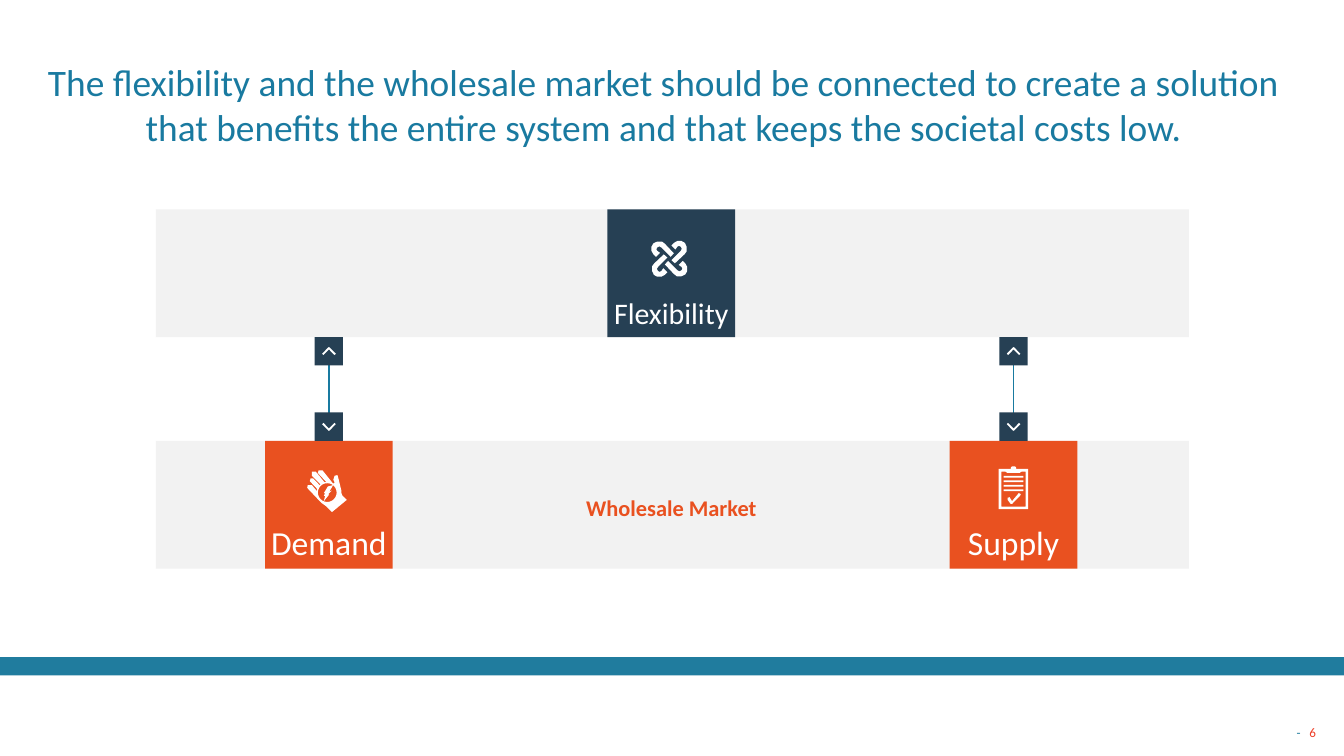
"""Build the slide that links the flexibility and wholesale markets."""
from lxml import etree
from pptx import Presentation
from pptx.dml.color import RGBColor
from pptx.enum import shapes, text
from pptx.oxml import ns
from pptx.util import Pt

TEAL = RGBColor(0x19, 0x7A, 0xA0)
FOOTER_TEAL = RGBColor(0x20, 0x7C, 0x9E)
NAVY = RGBColor(0x26, 0x40, 0x54)
ORANGE = RGBColor(0xE9, 0x51, 0x20)
RED = RGBColor(0xEE, 0x3E, 0x27)
GREY = RGBColor(0xF2, 0xF2, 0xF2)
WHITE = RGBColor(0xFF, 0xFF, 0xFF)

FONT = "Calibri"
CARD = 68.4
BADGE = 15.2
FLEX_TOP, MARKET_TOP = 112.2, 236.2
BAND_LEFT, BAND_WIDTH = 83.5, 553.5

LOOP = [(-7.2, -1.1), (-5, -3.2), (-6.5, -4.3), (-7, -5.2), (-6.5, -6.1),
        (-5.4, -6.7), (-4.3, -6.1), (0.7, -1.1), (2.4, -3), (-2.4, -8.1),
        (-4, -9.3), (-6.5, -9.3), (-8.6, -8.3), (-9.6, -6.5), (-9.6, -4.3),
        (-8.6, -2.5)]
HAND = [(16.6, 2.5), (15.1, 2.9), (14.4, 5), (15.1, 6.5), (14.4, 7.2),
        (8.6, 0), (6.5, 0), (6.1, 1.4), (11.5, 7.2), (12.2, 8.3),
        (11.5, 8.6), (5, 0.7), (2.9, 0.7), (2.9, 2.9), (9.4, 9.4),
        (9.4, 10.4), (3.6, 4.3), (2.2, 4.3), (1.8, 5.8), (7.2, 11.5),
        (7.2, 12.2), (6.5, 12.2), (2.9, 7.9), (0.7, 7.9), (0.4, 9.4),
        (7.9, 17.3), (10.8, 19.4), (12.2, 20.9), (13.7, 22.3),
        (21.6, 15.8), (19.4, 13.7), (18.7, 12.2), (18.7, 10.8), (17.3, 5)]
BOLT = [(2.9, 3.6), (5, 0), (2.2, 0.7), (0, 4.3), (0.7, 4.3), (0, 5.8),
        (0.7, 5.8), (0, 8.6), (2.9, 5), (2.2, 5), (4.3, 2.9)]
BOARD = [(0, 1.4), (6.5, 1.4), (6.5, 0.7), (7.2, 0), (8.6, 0), (9.4, 0.7),
         (9.4, 1.4), (15.8, 1.4), (15.8, 23), (0, 23)]
PAPER = [(1.4, 2.9), (3.6, 2.9), (4.7, 3.6), (11.2, 3.6), (12.2, 2.9),
         (14.4, 2.9), (14.4, 21.6), (1.4, 21.6)]
TICK = [(6.5, 0.7), (2.9, 5), (1.6, 2.9), (0.5, 3.2), (0.5, 4.3),
        (2.2, 6.5), (2.9, 6.5), (7.2, 2.2), (7.6, 1.2)]


def style_run(run, size, color, bold=False):
    """Set the typeface, size and colour of one run."""
    run.font.name = FONT
    run.font.size = Pt(size)
    run.font.bold = bold
    run.font.color.rgb = color


def set_insets(frame, horizontal, vertical):
    """Set equal insets left and right, and top and bottom."""
    frame.margin_left = frame.margin_right = Pt(horizontal)
    frame.margin_top = frame.margin_bottom = Pt(vertical)


def add_block(slide, left, top, width, height, color, preset=shapes.MSO_SHAPE.RECTANGLE):
    """Add a filled preset shape without line or shadow."""
    block = slide.shapes.add_shape(preset, Pt(left), Pt(top), Pt(width), Pt(height))
    block.shadow.inherit = False
    block.fill.solid()
    block.fill.fore_color.rgb = color
    block.line.fill.background()
    return block


def add_card(slide, left, top, color, label, size):
    """Add a square card with its label at the bottom."""
    card = add_block(slide, left, top, CARD, CARD, color)
    frame = card.text_frame
    set_insets(frame, 0, 3.6)
    frame.vertical_anchor = text.MSO_ANCHOR.BOTTOM
    frame.text = label
    frame.paragraphs[0].alignment = text.PP_ALIGN.CENTER
    style_run(frame.paragraphs[0].runs[0], size, WHITE)
    return card


def add_label(slide, left, top, width, height, words, size, color, bold=False):
    """Add a centred, wrapping text box."""
    label = slide.shapes.add_textbox(Pt(left), Pt(top), Pt(width), Pt(height))
    frame = label.text_frame
    frame.word_wrap = True
    frame.text = words
    frame.paragraphs[0].alignment = text.PP_ALIGN.CENTER
    style_run(frame.paragraphs[0].runs[0], size, color, bold)
    return frame


def add_outline(slide, left, top, *contours, closed=True):
    """Add a white freeform, filled if closed and stroked if open."""
    placed = [[(Pt(left + x), Pt(top + y)) for x, y in contour] for contour in contours]
    builder = slide.shapes.build_freeform(*placed[0][0])
    for index, contour in enumerate(placed):
        if index:
            builder.move_to(*contour[0])
        builder.add_line_segments(contour[1:], close=closed)
    outline = builder.convert_to_shape()
    outline.shadow.inherit = False
    if closed:
        outline.fill.solid()
        outline.fill.fore_color.rgb = WHITE
        outline.line.fill.background()
    else:
        outline.fill.background()
        outline.line.color.rgb = WHITE
        outline.line.width = Pt(1)


def add_badge(slide, center, top, direction):
    """Add a square badge with a chevron, direction -1 for up and 1 for down."""
    add_block(slide, center - BADGE / 2, top, BADGE, BADGE, NAVY)
    tip = 1.7 * direction
    add_outline(slide, center, top + BADGE / 2, [(-3.3, -tip), (0, tip), (3.3, -tip)], closed=False)


def add_link(slide, card):
    """Link the flexibility band with the top of a market card."""
    center = (card.left + card.width / 2) / Pt(1)
    start = FLEX_TOP + CARD
    link = slide.shapes.add_connector(
        shapes.MSO_CONNECTOR.STRAIGHT, Pt(center), Pt(start), Pt(center), Pt(MARKET_TOP))
    link.end_connect(card, 0)
    link.line.color.rgb = TEAL
    link.line.width = Pt(1)
    etree.SubElement(link._element.spPr, ns.qn("a:effectLst"))
    add_badge(slide, center, start, -1)
    add_badge(slide, center, MARKET_TOP - BADGE, 1)


def add_knot_icon(slide, center_x, center_y):
    """Add four interlocked loops, each a quarter turn from the last."""
    loop = LOOP
    for _ in range(4):
        add_outline(slide, center_x, center_y, loop)
        loop = [(-y, x) for x, y in loop]


def add_hand_icon(slide, left, top):
    """Add a hand holding a coin with a lightning bolt."""
    add_outline(slide, left, top, HAND)
    coin = add_block(slide, left + 5.7, top + 6.5, 10.8, 10.8, ORANGE, shapes.MSO_SHAPE.OVAL)
    coin.line.color.rgb = WHITE
    coin.line.width = Pt(0.75)
    add_outline(slide, left + 9.3, top + 7.9, BOLT)


def add_clipboard_icon(slide, left, top):
    """Add a clipboard with four ruled lines and a tick."""
    add_outline(slide, left + 4.3, top + 13.7, TICK)
    add_outline(slide, left, top, BOARD, PAPER)
    for row in range(4):
        add_block(slide, left + 2.7, top + 5.2 + 2.4 * row, 10.6, 0.9, WHITE)


def add_footer(slide):
    """Add the footer stripe and the page number."""
    add_block(slide, 0, 352, 720, 9.9, FOOTER_TEAL)
    number = slide.shapes.add_textbox(Pt(618.5), Pt(371.5), Pt(93.6), Pt(28.8)).text_frame
    number.word_wrap = True
    number.vertical_anchor = text.MSO_ANCHOR.BOTTOM
    line = number.paragraphs[0]
    line.alignment = text.PP_ALIGN.RIGHT
    line.line_spacing = 0.93
    for words, color in (("- ", FOOTER_TEAL), ("6", RED)):
        run = line.add_run()
        run.text = words
        style_run(run, 7, color)
    line.runs[0].font._element.set("spc", "160")


def main():
    """Build and save the slide."""
    deck = Presentation()
    deck.slide_width, deck.slide_height = Pt(720), Pt(405)
    slide = deck.slides.add_slide(deck.slide_layouts[6])
    add_footer(slide)
    title = add_label(
        slide, 15.8, 28.8, 679.7, 78.5,
        "The flexibility and the wholesale market should be connected to create a solution "
        "that benefits the entire system and that keeps the societal costs low.", 20, TEAL)
    set_insets(title, 5, 2.9)
    for top in (FLEX_TOP, MARKET_TOP):
        add_block(slide, BAND_LEFT, top, BAND_WIDTH, CARD, GREY)
    add_card(slide, 325.4, FLEX_TOP, NAVY, "Flexibility", 16)
    add_knot_icon(slide, 358.6, 138.7)
    demand = add_card(slide, 142, MARKET_TOP, ORANGE, "Demand", 18)
    add_hand_icon(slide, 164.2, 252)
    supply = add_card(slide, 508.8, MARKET_TOP, ORANGE, "Supply", 18)
    add_clipboard_icon(slide, 535, 249.8)
    for card in (demand, supply):
        add_link(slide, card)
    market = add_label(slide, 266.4, 261.4, 186.5, 21.6, "Wholesale Market", 12, ORANGE, bold=True)
    market.paragraphs[0].space_after = Pt(9)
    deck.save("out.pptx")


if __name__ == "__main__":
    main()
